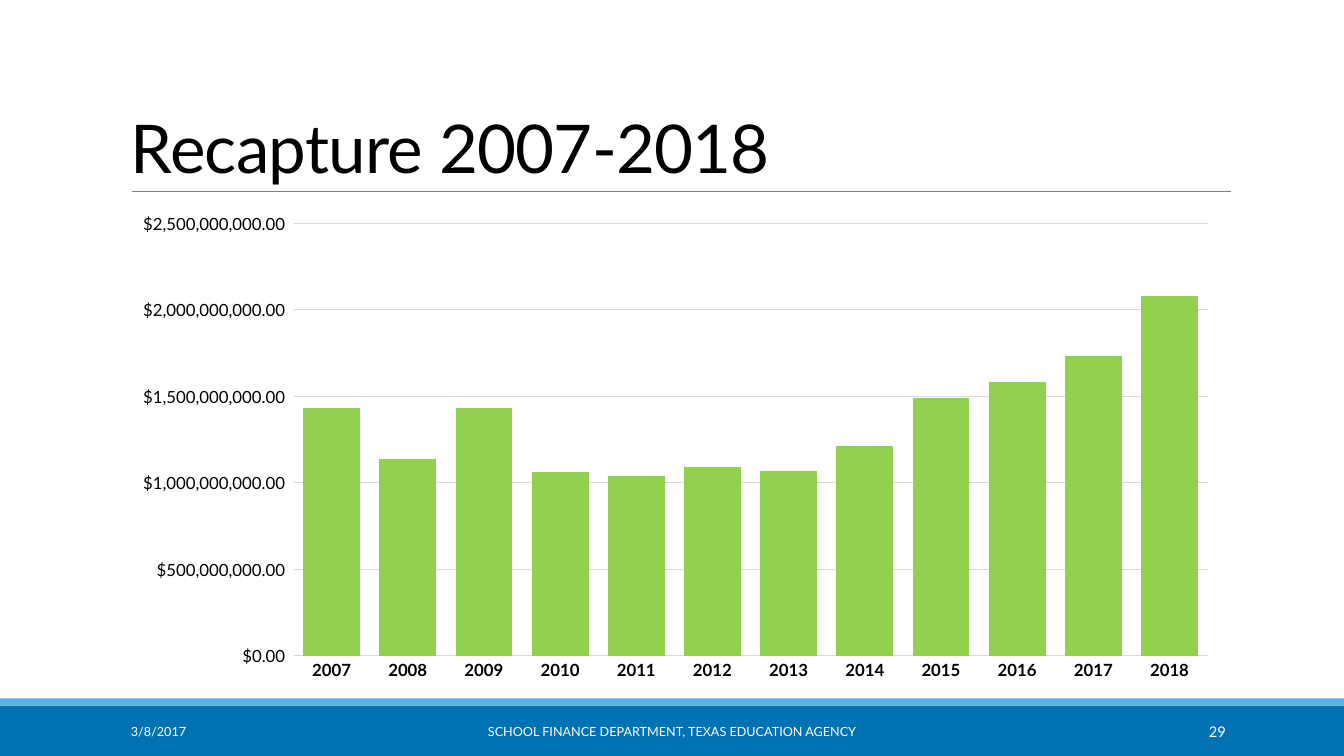
from dataclasses import dataclass

from lxml.etree import SubElement
from pptx import Presentation
from pptx.chart.data import CategoryChartData
from pptx.dml.color import RGBColor
from pptx.enum.chart import XL_CHART_TYPE, XL_TICK_MARK
from pptx.enum.shapes import MSO_CONNECTOR, MSO_SHAPE
from pptx.enum.text import MSO_ANCHOR, PP_ALIGN
from pptx.oxml.ns import qn
from pptx.slide import Slide
from pptx.util import Inches, Pt

FONT = "Lato"
COLORS = {
    "text": "000000",
    "footer_text": "FFFFFF",
    "footer": "0072B2",
    "stripe": "56B4E9",
    "rule": "808080",
    "grid": "D9D9D9",
    "bar": "92D050",
}

# Grid of square cells, ten to the inch
CELL = Inches(0.1)
COLS, ROWS = 133.33, 75
LEFT, CONTENT_COLS = 12, 110
FOOTER_ROW, FOOTER_ROWS = 70.6, 4


@dataclass
class Box:
    col: float
    row: float
    cols: float
    rows: float

    def emu(self) -> tuple[int, ...]:
        return tuple(round(n * CELL) for n in (self.col, self.row, self.cols, self.rows))


@dataclass
class Band:
    box: Box
    color: str


@dataclass
class Label:
    text: str
    box: Box
    size: float
    color: str = "footer_text"
    align: PP_ALIGN = PP_ALIGN.LEFT
    anchor: MSO_ANCHOR = MSO_ANCHOR.MIDDLE
    line_spacing: float = 1.0
    tracking: float = 0


BANDS = [
    Band(Box(0, 70, COLS, 5), "footer"),
    Band(Box(0, 69.3, COLS, 0.7), "stripe"),
]
LABELS = [
    Label("Recapture 2007-2018", Box(LEFT, 3.1, CONTENT_COLS, 15.9), 48, "text",
          anchor=MSO_ANCHOR.BOTTOM, line_spacing=1.1, tracking=-0.5),
    Label("3/8/2017", Box(LEFT, FOOTER_ROW, 27, FOOTER_ROWS), 9),
    Label("SCHOOL FINANCE DEPARTMENT, TEXAS EDUCATION AGENCY",
          Box(40.3, FOOTER_ROW, 52.7, FOOTER_ROWS), 9, align=PP_ALIGN.CENTER),
    Label("29", Box(108.3, FOOTER_ROW, 14.3, FOOTER_ROWS), 10.5, align=PP_ALIGN.RIGHT),
]
FIRST_YEAR = 2007
RECAPTURE_MILLIONS = [1430, 1140, 1430, 1060, 1040, 1090,
                      1070, 1210, 1490, 1580, 1730, 2080]
MONEY = '"$"#,##0.00_);[Red]\\("$"#,##0.00\\)'


def rgb(name: str) -> RGBColor:
    return RGBColor.from_string(COLORS[name])


def set_font(font, size: float, color: str, bold: bool = False) -> None:
    font.name, font.size, font.bold = FONT, Pt(size), bold
    font.color.rgb = rgb(color)


def set_line(line, color: str, width: float) -> None:
    line.color.rgb = rgb(color)
    line.width = Pt(width)


def add_band(s: Slide, band: Band) -> None:
    sp = s.shapes.add_shape(MSO_SHAPE.RECTANGLE, *band.box.emu())
    sp.shadow.inherit = False
    sp.fill.solid()
    sp.fill.fore_color.rgb = rgb(band.color)
    sp.line.fill.background()


def add_rule(s: Slide, row: float, start: float, end: float) -> None:
    x1, y, x2, _ = Box(start, row, end, 0).emu()
    line = s.shapes.add_connector(MSO_CONNECTOR.STRAIGHT, x1, y, x2, y)
    set_line(line.line, "rule", 0.5)
    SubElement(line._element.spPr, qn("a:effectLst"))


def add_label(s: Slide, label: Label) -> None:
    tf = s.shapes.add_textbox(*label.box.emu()).text_frame
    tf.word_wrap = True
    tf.vertical_anchor = label.anchor
    tf.text = label.text
    p = tf.paragraphs[0]
    p.alignment = label.align
    p.line_spacing = label.line_spacing
    r = p.runs[0]
    set_font(r.font, label.size, label.color)
    if label.tracking:
        r.font._element.set("spc", str(round(label.tracking * 100)))


def add_recapture_chart(s: Slide, box: Box) -> None:
    data = CategoryChartData()
    data.categories = [str(FIRST_YEAR + i) for i in range(len(RECAPTURE_MILLIONS))]
    data.add_series("Series 1", [m * 1_000_000 for m in RECAPTURE_MILLIONS])
    chart = s.shapes.add_chart(XL_CHART_TYPE.COLUMN_CLUSTERED, *box.emu(), data).chart
    chart.has_legend = chart.has_title = False
    set_font(chart.font, 10, "text")

    # Bars
    plot = chart.plots[0]
    plot.gap_width, plot.overlap = 34, -27
    plot.vary_by_categories = False
    fill = plot.series[0].format.fill
    fill.solid()
    fill.fore_color.rgb = rgb("bar")

    # Axes
    years, dollars = chart.category_axis, chart.value_axis
    for axis in (years, dollars):
        axis.major_tick_mark = axis.minor_tick_mark = XL_TICK_MARK.NONE
        set_font(axis.tick_labels.font, 12, "text", bold=axis is years)
    set_line(years.format.line, "grid", 0.75)
    dollars.format.line.fill.background()
    set_line(dollars.major_gridlines.format.line, "grid", 0.75)
    dollars.minimum_scale, dollars.maximum_scale = 0, 2_500_000_000
    dollars.major_unit = 500_000_000
    dollars.tick_labels.number_format = MONEY
    dollars.tick_labels.number_format_is_linked = False


def main() -> None:
    prs = Presentation()
    prs.slide_width, prs.slide_height = round(COLS * CELL), ROWS * CELL
    s = prs.slides.add_slide(prs.slide_layouts[6])

    # Footer bands and title rule
    for band in BANDS:
        add_band(s, band)
    add_rule(s, 19, 13.1, 122.1)

    # Chart, then title and footer text
    add_recapture_chart(s, Box(LEFT, 20.2, CONTENT_COLS, 48.2))
    for label in LABELS:
        add_label(s, label)

    prs.save("out.pptx")


if __name__ == "__main__":
    main()
